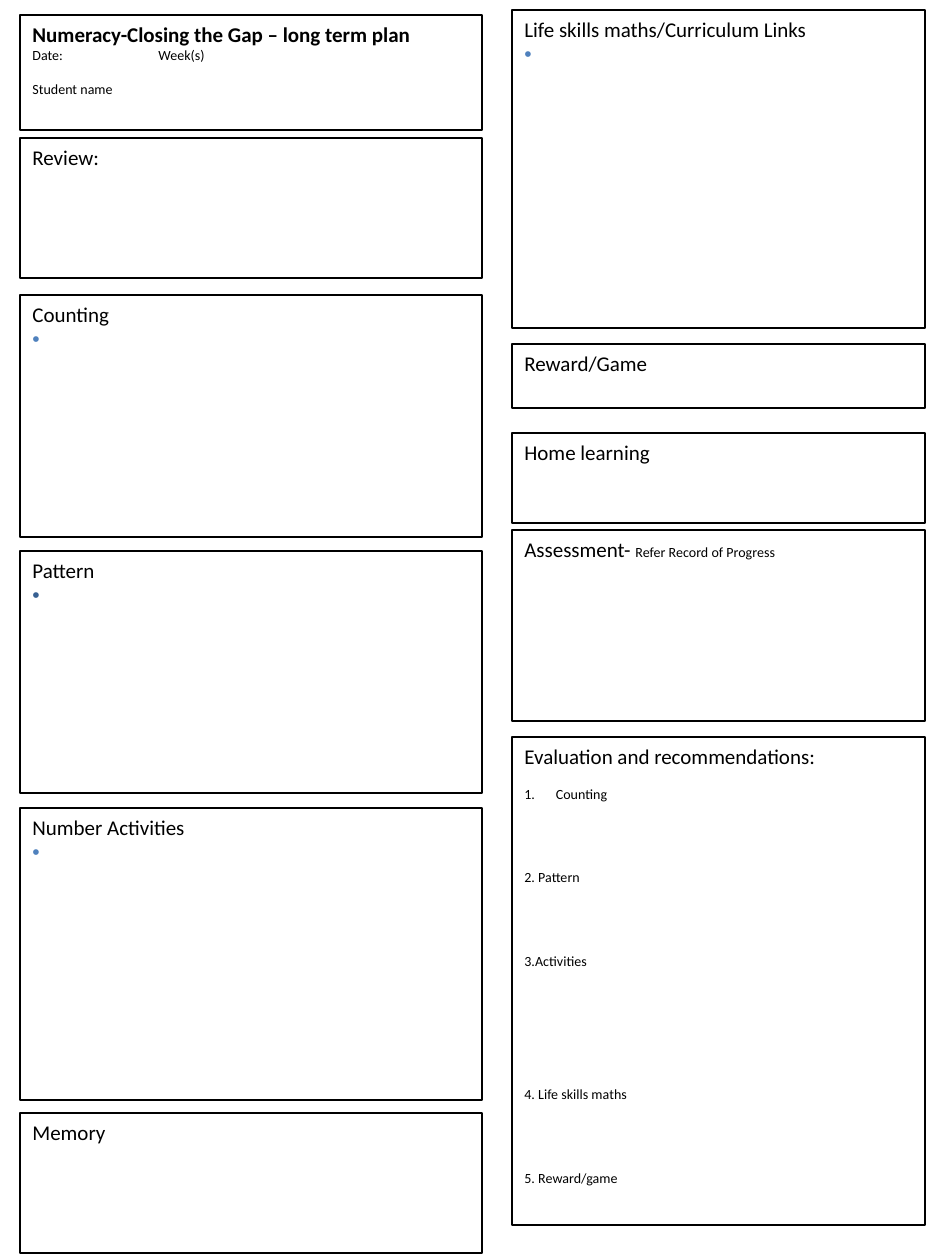
from lxml import etree
from pptx import Presentation
from pptx.dml.color import RGBColor
from pptx.enum.shapes import MSO_SHAPE
from pptx.enum.text import MSO_ANCHOR, PP_ALIGN
from pptx.oxml.ns import qn
from pptx.util import Emu, Pt

RECTANGLE = MSO_SHAPE.RECTANGLE
TOP = MSO_ANCHOR.TOP
LEFT = PP_ALIGN.LEFT

EMU_PER_PX = 914400 // 126
FONT = "Calibri"
TITLE_SIZE, BODY_SIZE = 12, 8
COLORS = {"ink": "000000", "blue": "4F81BD", "dark_blue": "376092"}


def px(length):
    return Emu(length * EMU_PER_PX)


def add_frame(page, box):
    """Draw an outlined box and return its text frame."""
    shape = page.shapes.add_shape(RECTANGLE, *map(px, box))
    shape.shadow.inherit = False
    shape.fill.background()
    shape.line.color.rgb = RGBColor.from_string(COLORS["ink"])
    shape.line.width = Pt(0.75)
    frame = shape.text_frame
    frame.word_wrap = True
    frame.vertical_anchor = TOP
    return frame


def write(para, text, size=TITLE_SIZE, color="ink", bold=False):
    para.text = text
    para.alignment = LEFT
    para.font.name = FONT
    para.font.size = Pt(size)
    para.font.bold = bold
    para.font.color.rgb = RGBColor.from_string(COLORS[color])
    # Runs carry the same font so that the shape style does not win
    for span in para.runs:
        span.font.color.rgb = RGBColor.from_string(COLORS[color])
    return para


def add_marker(para, tag, **attributes):
    """Give a paragraph a bullet or an automatic number."""
    properties = para._p.get_or_add_pPr()
    if tag == "a:buChar":
        etree.SubElement(properties, qn("a:buFont"), typeface="Arial")
    etree.SubElement(properties, qn(tag), **attributes)


def add_panel(page, box, title, bullet_color=None):
    """A titled box, with an empty bullet to fill in if a colour is given."""
    frame = add_frame(page, box)
    write(frame.paragraphs[0], title)
    if bullet_color:
        bullet = write(frame.add_paragraph(), " ", color=bullet_color)
        add_marker(bullet, "a:buChar", char="•")
    return frame


def add_header(page, box):
    frame = add_frame(page, box)
    write(frame.paragraphs[0], "Numeracy-Closing the Gap – long term plan", bold=True)
    write(frame.add_paragraph(), "Date:\t\tWeek(s)", BODY_SIZE)
    student = write(frame.add_paragraph(), "Student name", BODY_SIZE)
    student.space_before = px(17)


def add_assessment(page, box):
    frame = add_panel(page, box, "Assessment- ")
    note = frame.paragraphs[0].add_run()
    note.text = "Refer Record of Progress"
    note.font.size = Pt(BODY_SIZE)
    note.font.color.rgb = RGBColor.from_string(COLORS["ink"])


def add_evaluation(page, box):
    frame = add_panel(page, box, "Evaluation and recommendations:")
    items = [("Counting", 0), ("2. Pattern", 50), ("3.Activities", 50),
             ("4. Life skills maths", 100), ("5. Reward/game", 50)]
    for text, gap in items:
        para = write(frame.add_paragraph(), text, BODY_SIZE)
        para.line_spacing = 2.0
        para.space_before = px(gap)
    # The first item is numbered automatically, with a hanging indent
    first = frame.paragraphs[1]
    properties = first._p.get_or_add_pPr()
    properties.set("marL", str(Pt(18)))
    properties.set("indent", str(-Pt(18)))
    add_marker(first, "a:buAutoNum", type="arabicPeriod")


def add_left_column(page, left, width):
    add_header(page, (left, 15, width, 115))
    panels = [("Review:", 138, 140, None), ("Counting", 295, 242, "blue"),
              ("Pattern", 551, 242, "dark_blue"),
              ("Number Activities", 808, 292, "blue"), ("Memory", 1113, 140, None)]
    for title, top, height, bullet_color in panels:
        add_panel(page, (left, top, width, height), title, bullet_color)


def add_right_column(page, left, width):
    panels = [("Life skills maths/Curriculum Links", 10, 318, "blue"),
              ("Reward/Game", 344, 64, None), ("Home learning", 433, 90, None)]
    for title, top, height, bullet_color in panels:
        add_panel(page, (left, top, width, height), title, bullet_color)
    add_assessment(page, (left, 530, width, 191))
    add_evaluation(page, (left, 737, width, 488))


def main():
    deck = Presentation()
    deck.slide_width, deck.slide_height = px(945), px(1260)
    page = deck.slides.add_slide(deck.slide_layouts[6])
    add_left_column(page, 20, 462)
    add_right_column(page, 512, 413)
    deck.save("out.pptx")


if __name__ == "__main__":
    main()
